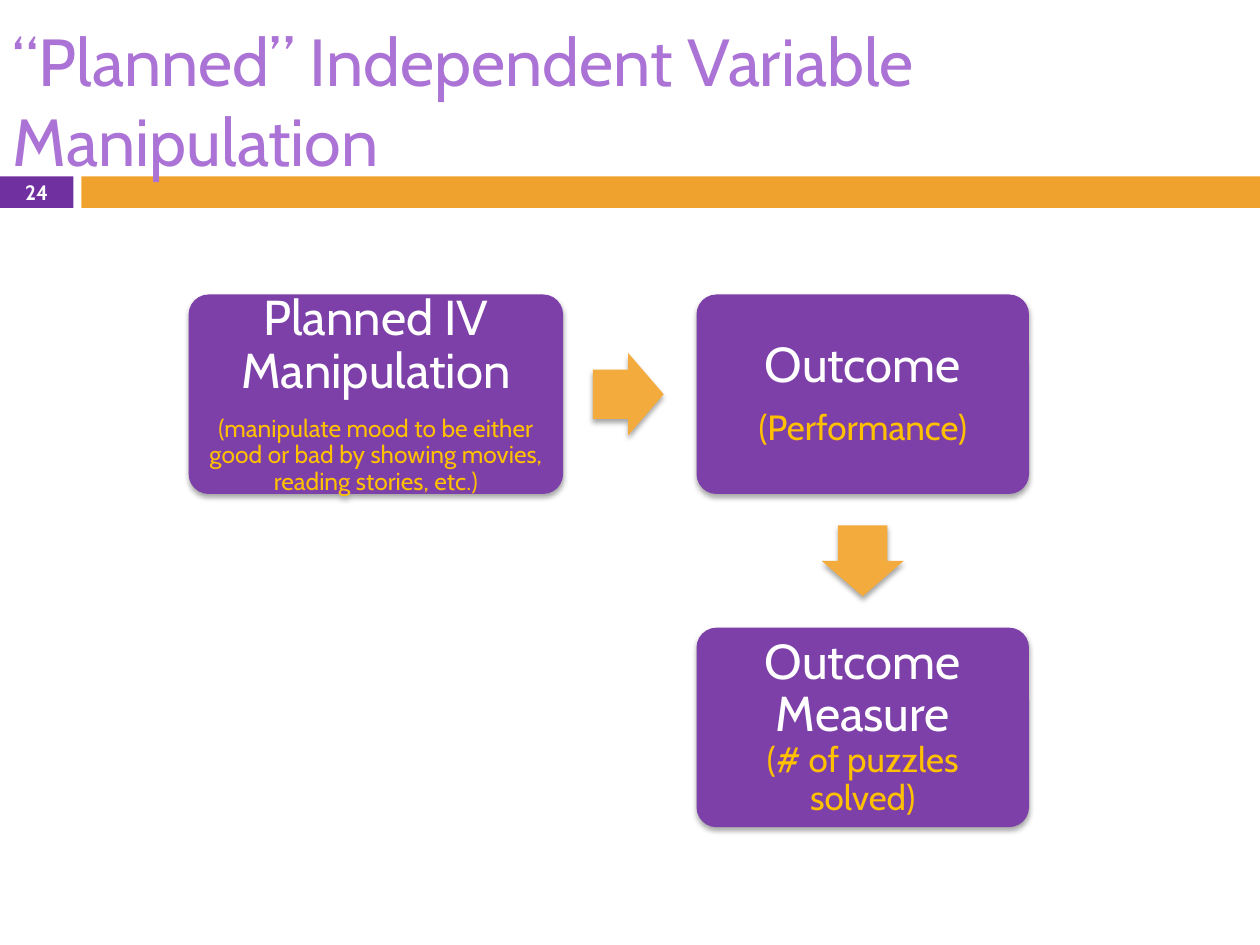
from dataclasses import dataclass

import lxml.etree
import pptx
import pptx.dml.color
import pptx.enum.shapes
import pptx.enum.text
import pptx.oxml.ns
import pptx.util

Pt = pptx.util.Pt
RGBColor = pptx.dml.color.RGBColor
ShapeType = pptx.enum.shapes.MSO_SHAPE
Align = pptx.enum.text.PP_ALIGN
Anchor = pptx.enum.text.MSO_ANCHOR

PURPLE = RGBColor(0x70, 0x30, 0xA0)
BOX_PURPLE = RGBColor(0x7D, 0x40, 0xA9)
ORANGE = RGBColor(0xF0, 0xA2, 0x2E)
ARROW_ORANGE = RGBColor(0xF4, 0xAB, 0x3D)
LILAC = RGBColor(0xAB, 0x73, 0xD5)
GOLD = RGBColor(0xFF, 0xC0, 0x00)
WHITE = RGBColor(0xFF, 0xFF, 0xFF)

FONT = "Cabin"
HEADING_SIZE = 28
BOX_HEIGHT = 114
BOX_INSET = 8.4
ARROW_LENGTH, ARROW_WIDTH = 40.5, 47


@dataclass
class Box:
    left: float
    top: float
    width: float
    heading: str
    detail: str
    detail_size: float
    same_paragraph: bool = False


@dataclass
class Arrow:
    kind: int
    center_x: float
    center_y: float
    width: float
    height: float


COLUMN_LEFT, COLUMN_WIDTH = 398, 190
ROW_TOP, LOWER_TOP = 168.3, 358.7
BOXES = [
    Box(107.8, ROW_TOP, 214, "Planned IV Manipulation",
        "(manipulate mood to be either good or bad by showing movies, "
        "reading stories, etc.)", 14),
    Box(COLUMN_LEFT, ROW_TOP, COLUMN_WIDTH, "Outcome", "(Performance)", 20),
    Box(COLUMN_LEFT, LOWER_TOP, COLUMN_WIDTH, "Outcome Measure",
        "(# of puzzles solved)", 20, same_paragraph=True),
]
ARROWS = [
    Arrow(ShapeType.RIGHT_ARROW, 359, ROW_TOP + BOX_HEIGHT / 2,
          ARROW_LENGTH, ARROW_WIDTH),
    Arrow(ShapeType.DOWN_ARROW, COLUMN_LEFT + COLUMN_WIDTH / 2,
          (ROW_TOP + BOX_HEIGHT + LOWER_TOP) / 2, ARROW_WIDTH, ARROW_LENGTH),
]


def add_text(paragraph, text: str, *, size: float, color: RGBColor,
             bold: bool = False, align=Align.CENTER) -> None:
    paragraph.alignment = align
    run = paragraph.add_run()
    run.text = text
    run.font.name = FONT
    run.font.size = Pt(size)
    run.font.bold = bold
    run.font.color.rgb = color


def add_filled_shape(slide, kind: int, left: float, top: float, width: float,
                     height: float, color: RGBColor):
    shape = slide.shapes.add_shape(kind, Pt(left), Pt(top), Pt(width), Pt(height))
    shape.shadow.inherit = False
    shape.fill.solid()
    shape.fill.fore_color.rgb = color
    shape.line.fill.background()
    return shape


def add_shadow(shape) -> None:
    qn = pptx.oxml.ns.qn
    effects = shape.element.spPr.find(qn("a:effectLst"))
    shadow = lxml.etree.SubElement(
        effects, qn("a:outerShdw"), blurRad=str(Pt(3)), dist=str(Pt(2)),
        dir="5400000", rotWithShape="0")
    color = lxml.etree.SubElement(shadow, qn("a:srgbClr"), val="000000")
    lxml.etree.SubElement(color, qn("a:alpha"), val="35000")


def draw_box(slide, box: Box) -> None:
    shape = add_filled_shape(slide, ShapeType.ROUNDED_RECTANGLE, box.left, box.top,
                             box.width, BOX_HEIGHT, BOX_PURPLE)
    shape.adjustments[0] = 0.1
    add_shadow(shape)
    frame = shape.text_frame
    frame.word_wrap = True
    frame.vertical_anchor = Anchor.MIDDLE
    frame.margin_left = frame.margin_right = Pt(BOX_INSET)
    frame.margin_top = frame.margin_bottom = Pt(BOX_INSET)

    heading = frame.paragraphs[0]
    add_text(heading, box.heading, size=HEADING_SIZE, color=WHITE)
    if box.same_paragraph:
        heading.add_line_break()
        detail = heading
    else:
        detail = frame.add_paragraph()
    add_text(detail, box.detail, size=box.detail_size, color=GOLD)
    for paragraph in frame.paragraphs:
        paragraph.line_spacing = 0.9
    if not box.same_paragraph:
        heading.space_after = Pt(0.35 * HEADING_SIZE)


def draw_arrow(slide, arrow: Arrow) -> None:
    shape = add_filled_shape(slide, arrow.kind, arrow.center_x - arrow.width / 2,
                             arrow.center_y - arrow.height / 2,
                             arrow.width, arrow.height, ARROW_ORANGE)
    shape.adjustments[0] = 0.6
    shape.adjustments[1] = 0.5
    add_shadow(shape)


def main() -> None:
    presentation = pptx.Presentation()
    presentation.slide_width, presentation.slide_height = Pt(720), Pt(540)
    slide = presentation.slides.add_slide(presentation.slide_layouts[5])

    # Band under the title, with the slide number at its left end
    number = add_filled_shape(slide, ShapeType.RECTANGLE, 0, 100.8, 42, 18, PURPLE)
    add_filled_shape(slide, ShapeType.RECTANGLE, 46.5, 100.8, 673.5, 18, ORANGE)
    frame = number.text_frame
    frame.vertical_anchor = Anchor.MIDDLE
    frame.margin_top = frame.margin_bottom = 0
    add_text(frame.paragraphs[0], "24", size=11.9, color=WHITE, bold=True)

    # Flow from manipulation to outcome to measure
    for box in BOXES:
        draw_box(slide, box)
    for arrow in ARROWS:
        draw_arrow(slide, arrow)

    # Title, in front of the band
    title = slide.shapes.title
    title.left, title.top, title.width, title.height = Pt(0), Pt(18), Pt(714), Pt(78)
    title.text_frame.vertical_anchor = Anchor.MIDDLE
    title.text_frame.auto_size = pptx.enum.text.MSO_AUTO_SIZE.NONE
    add_text(title.text_frame.paragraphs[0],
             "“Planned” Independent Variable Manipulation",
             size=38, color=LILAC, align=Align.LEFT)
    slide.shapes.element.append(title.element)

    presentation.save("out.pptx")


if __name__ == "__main__":
    main()
